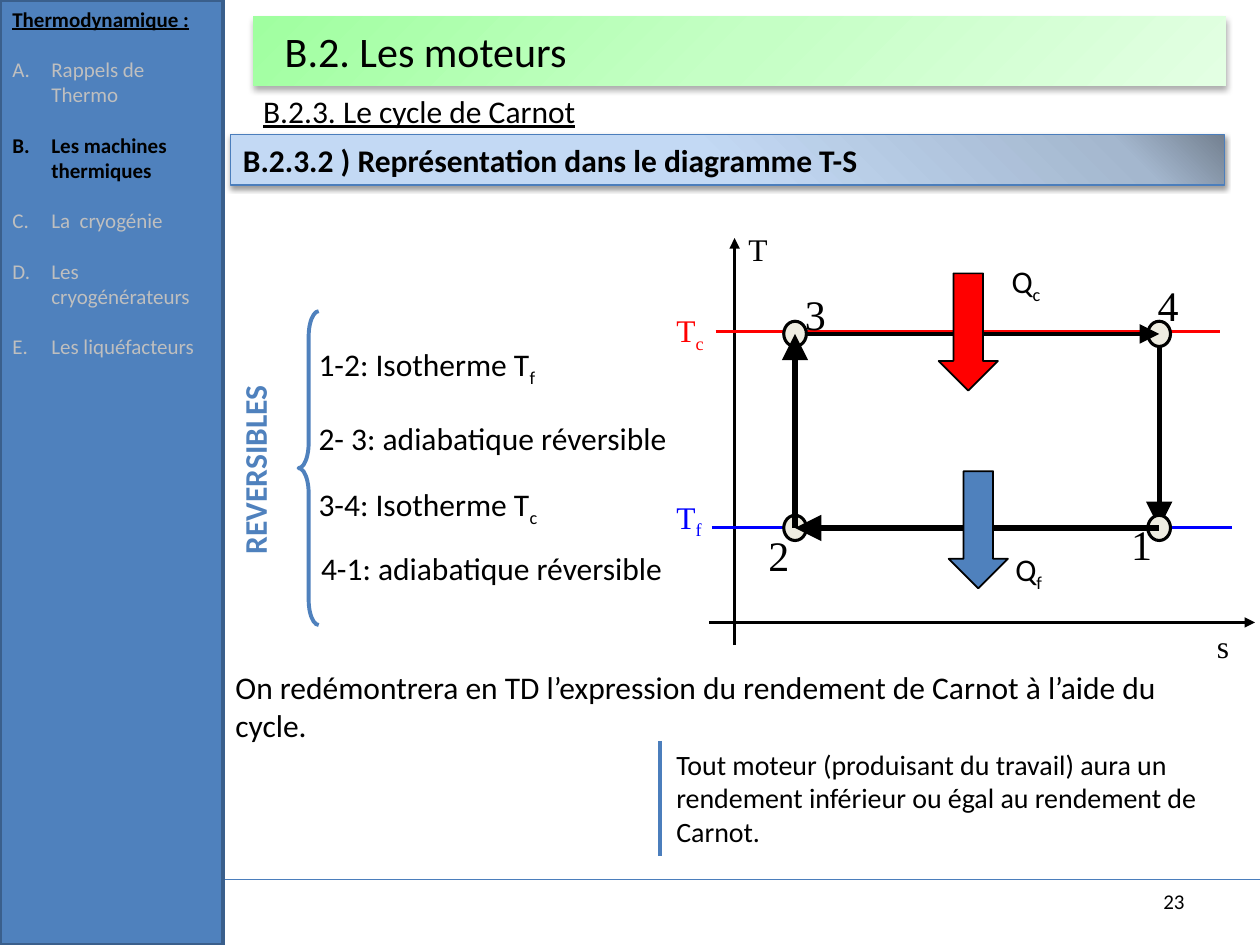
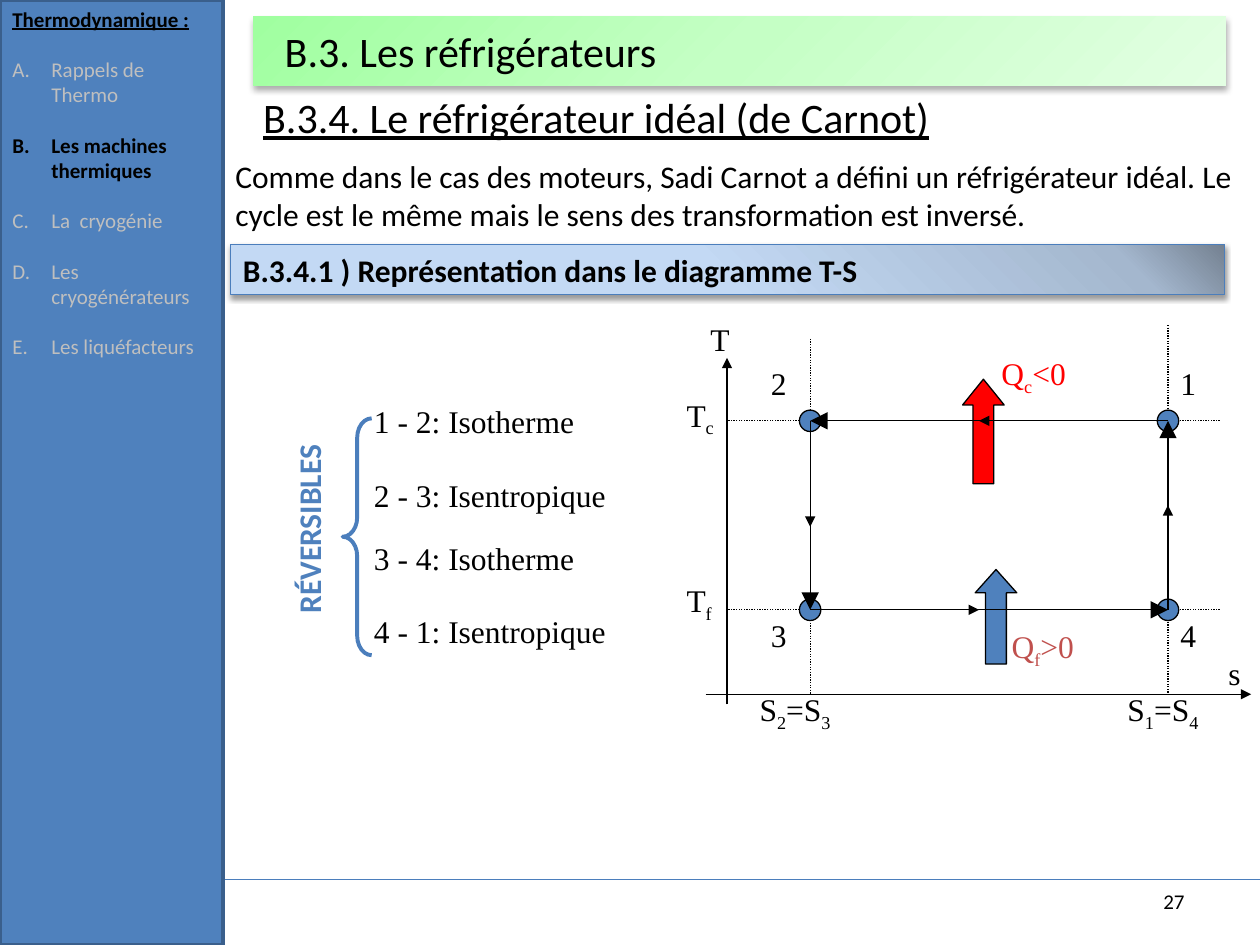
from pptx import Presentation
from pptx.dml.color import RGBColor
from pptx.enum.dml import MSO_LINE
from pptx.enum.shapes import MSO_CONNECTOR, MSO_SHAPE
from pptx.enum.text import MSO_ANCHOR, PP_ALIGN
from pptx.oxml.ns import qn
from pptx.oxml.xmlchemy import OxmlElement
from pptx.util import Inches, Pt

SANS, SERIF = "Calibri", "Times New Roman"
BLACK = RGBColor(0x00, 0x00, 0x00)
BLUE = RGBColor(0x4F, 0x81, 0xBD)
RULE_BLUE = RGBColor(0x4B, 0x7E, 0xBC)
DARK_BLUE = RGBColor(0x3A, 0x5F, 0x8C)
COLD_BLUE = RGBColor(0x00, 0x00, 0xFF)
RED = RGBColor(0xFF, 0x00, 0x00)
BRICK = RGBColor(0xC0, 0x50, 0x4D)
GREY = RGBColor(0xBF, 0xBF, 0xBF)
CREAM = RGBColor(0xEE, 0xEC, 0xE1)
GREEN_STOPS = [(0, RGBColor(0xA0, 0xFF, 0xA0)), (50, RGBColor(0xC5, 0xFF, 0xC5)),
               (100, RGBColor(0xE3, 0xFF, 0xE3))]
STEEL_STOPS = [(0, RGBColor(0x74, 0x81, 0x91)), (11, RGBColor(0xA4, 0xB7, 0xCE)),
               (52, RGBColor(0xC3, 0xD9, 0xF4))]

COLUMNS, ROWS = 100, 75
CHAPTERS = ["Rappels de Thermo", "Les machines thermiques", "La  cryogénie",
            "Les cryogénérateurs", "Les liquéfacteurs"]
CURRENT_CHAPTER = "Les machines thermiques"


def add_child(parent, tag, **attributes):
    child = OxmlElement(tag)
    for name, value in attributes.items():
        child.set(name, str(value))
    parent.append(child)
    return child


class Course:
    """Holds the deck, its grid and style, and the page being drawn."""

    def __init__(self):
        self.deck = Presentation()
        self.deck.slide_width, self.deck.slide_height = Inches(10), Inches(7.5)
        self.column = self.deck.slide_width / COLUMNS
        self.row = self.deck.slide_height / ROWS
        self.page = None

    def place(self, left, top, *size):
        """Turn grid columns and rows into slide lengths."""
        units = (self.column, self.row) * 2
        return [round(value * unit) for value, unit in zip((left, top, *size), units)]

    def start_page(self, title, number):
        self.page = self.deck.slides.add_slide(self.deck.slide_layouts[6])
        self.line((0, 69.8), (COLUMNS, 69.8), RULE_BLUE)
        self.shape(MSO_SHAPE.RECTANGLE, (0, 0, 17.7, ROWS), BLUE, DARK_BLUE, 2)
        band = self.shape(MSO_SHAPE.RECTANGLE, (20.1, 1.3, 77.2, 5.5), None, None)
        self.shade(band, GREEN_STOPS, 45)
        self.cast_shadow(band, 32, 3.5, 2.2)
        self.compose(band.text_frame, title, size=24)
        band.text_frame.margin_left = Inches(0.25)
        footer = self.text(str(number), (71.7, 69.5, 23.3), size=12, align=PP_ALIGN.RIGHT)
        footer.text_frame.vertical_anchor = MSO_ANCHOR.MIDDLE
        self.outline()

    def outline(self):
        """List the chapters in the sidebar, the current one in bold."""
        frame = self.text("Thermodynamique :", (0, 0, 17.7, 29.3), size=12,
                          bold=True, underline=True).text_frame
        for chapter in CHAPTERS:
            para = frame.add_paragraph()
            para.space_before = Pt(14.4)
            properties = para._p.get_or_add_pPr()
            properties.set("marL", str(Inches(0.31)))
            properties.set("indent", str(-Inches(0.31)))
            add_child(properties, "a:buFont", typeface="+mj-lt")
            add_child(properties, "a:buAutoNum", type="alphaUcPeriod")
            current = chapter == CURRENT_CHAPTER
            self.style(para, 12, SANS, BLACK if current else GREY, bold=current)
            para.add_run().text = chapter

    def style(self, para, size, face, color, bold=False, underline=False):
        font = para.font
        font.size, font.name, font.bold, font.underline = Pt(size), face, bold, underline
        font.color.rgb = color

    def compose(self, frame, text, size=18, face=SANS, color=BLACK, bold=False,
                underline=False, align=PP_ALIGN.LEFT):
        """Write one paragraph; the letter after an underscore is a subscript."""
        frame.word_wrap = True
        para = frame.paragraphs[0]
        para.alignment = align
        self.style(para, size, face, color, bold, underline)
        first, *others = text.split("_")
        para.add_run().text = first
        for part in others:
            span = para.add_run()
            span.text = part[0]
            span._r.get_or_add_rPr().set("baseline", "-25000")
            if part[1:]:
                para.add_run().text = part[1:]

    def text(self, text, area, turn=0, **style):
        left, top, width, height = (*area, 4)[:4]
        box = self.page.shapes.add_textbox(*self.place(left, top, width, height))
        box.rotation = turn
        self.compose(box.text_frame, text, **style)
        return box

    def shape(self, kind, area, fill, line=BLACK, weight=0.75, adjust=()):
        shape = self.page.shapes.add_shape(kind, *self.place(*area))
        shape.shadow.inherit = False
        for index, value in enumerate(adjust):
            shape.adjustments[index] = value
        for paint, color in ((shape.fill, fill), (shape.line.fill, line)):
            if color is None:
                paint.background()
            else:
                paint.solid()
                paint.fore_color.rgb = color
        if line is not None:
            shape.line.width = Pt(weight)
        return shape

    def shade(self, shape, stops, angle):
        shape.fill.gradient()
        gradient = shape._element.spPr.find(qn("a:gradFill"))
        stop_list = gradient.find(qn("a:gsLst"))
        for stop in list(stop_list):
            stop_list.remove(stop)
        for position, color in stops:
            stop = add_child(stop_list, "a:gs", pos=position * 1000)
            add_child(stop, "a:srgbClr", val=color)
        gradient.find(qn("a:lin")).set("ang", str(angle * 60000))

    def cast_shadow(self, shape, opacity, blur, distance):
        effects = shape._element.spPr.find(qn("a:effectLst"))
        shadow = add_child(effects, "a:outerShdw", blurRad=Pt(blur), dist=Pt(distance),
                           dir=90 * 60000, rotWithShape=0)
        color = add_child(shadow, "a:srgbClr", val=BLACK)
        add_child(color, "a:alpha", val=opacity * 1000)

    def line(self, start, end, color=BLACK, weight=0.75, arrow=None, dotted=False):
        """Draw a straight line; arrow is the size of its head, 'med' or 'lg'."""
        line = self.page.shapes.add_connector(
            MSO_CONNECTOR.STRAIGHT, *self.place(*start), *self.place(*end))
        line.line.color.rgb, line.line.width = color, Pt(weight)
        if dotted:
            line.line.dash_style = MSO_LINE.ROUND_DOT
        if arrow:
            add_child(line.line._get_or_add_ln(), "a:tailEnd",
                      type="triangle", w=arrow, len=arrow)
        add_child(line._element.spPr, "a:effectLst")

    def dot(self, center, width, height, fill, weight):
        left, top = center[0] - width / 2, center[1] - height / 2
        self.shape(MSO_SHAPE.OVAL, (left, top, width, height), fill, BLACK, weight)

    def section(self, text, top):
        band = self.shape(MSO_SHAPE.RECTANGLE, (18.3, top, 78.9, 4), None, RULE_BLUE)
        self.shade(band, STEEL_STOPS, 135)
        self.cast_shadow(band, 38, 3.1, 1.6)
        self.compose(band.text_frame, text, bold=True)

    def brace(self, area, curl, color, label, label_area):
        self.shape(MSO_SHAPE.LEFT_BRACE, area, None, color, 2.25, (curl, 0.5))
        self.text(label, label_area, turn=270, color=BLUE, bold=True, align=PP_ALIGN.CENTER)


def draw_engine_cycle(course):
    course.line((58.3, 51.2), (58.3, 18.9), weight=1.75, arrow="med")
    course.line((56.3, 49.4), (99.6, 49.4), weight=1.75, arrow="med")
    course.text("T", (58.4, 17.8, 5.1), face=SERIF)
    course.text("s", (95.6, 49.3, 6.4), face=SERIF)
    for label, top, level, left, right, color in (
            ("T_c", 24.2, 26.3, 56.8, 96.8, RED), ("T_f", 39, 41.9, 56.5, 97.8, COLD_BLUE)):
        course.text(label, (52.7, top, 7.5), face=SERIF, color=color)
        course.line((left, level), (right, level), color, 1.75)

    corners = {"1": (92, 41.9), "2": (63.1, 41.9), "3": (63.1, 26.5), "4": (92, 26.5)}
    for step in ("41", "4", "34", "1", "2", "12", "3", "23"):
        if len(step) == 1:
            course.dot(corners[step], 1.8, 2, CREAM, 1.75)
        else:
            weight = 2.25 if step == "34" else 3
            course.line(corners[step[0]], corners[step[1]], weight=weight, arrow="lg")
    for name, left, top in (("1", 88.8, 40.7), ("2", 60, 41.5), ("3", 62.9, 22.4),
                            ("4", 90.9, 21.7)):
        course.text(name, (left, top, 5, 5), size=24, face=SERIF)

    for label, left, top, fill, label_left, label_top in (
            ("Q_c", 74.5, 21.7, RED, 79.3, 20.3), ("Q_f", 75.3, 37.4, BLUE, 79.6, 43.2)):
        course.shape(MSO_SHAPE.DOWN_ARROW, (left, top, 4.7, 9.3), fill, BLACK, 1)
        course.text(label, (label_left, label_top, 6.3))


def draw_engine_page(course):
    course.start_page("B.2. Les moteurs", 23)
    course.text("B.2.3. Le cycle de Carnot", (19.9, 6.8, 75), underline=True)
    course.section("B.2.3.2 ) Représentation dans le diagramme T-S", 10.7)
    draw_engine_cycle(course)
    for step, left, top in (("1-2: Isotherme T_f", 24.3, 26.9),
                            ("2- 3: adiabatique réversible", 24.3, 32.8),
                            ("3-4: Isotherme T_c", 24.3, 38),
                            ("4-1: adiabatique réversible", 24.5, 43.1)):
        course.text(step, (left, top, 32))
    course.brace((23.7, 24.7, 1.6, 24.9), 1.26, BLUE, "REVERSIBLES", (7.4, 35.3, 25.6))
    course.text("On redémontrera en TD l’expression du rendement de Carnot à l’aide du cycle.",
                (17.7, 52.5, 76.9, 7.1))
    course.text("Tout moteur (produisant du travail) aura un rendement inférieur ou égal "
                "au rendement de Carnot.", (52.7, 58.8, 46.7, 9.1), size=16)
    course.line((52.4, 58.8), (52.4, 67.9), RULE_BLUE, 2.25)


def draw_refrigerator_cycle(course):
    left, right, hot, cold, base = 64.3, 92.7, 33.4, 48.4, 55.1
    for label, level, label_top in (("T_f", cold, 45.6), ("T_c", hot, 30.9)):
        course.line((96.8, level), (57.7, level), dotted=True)
        course.text(label, (53.5, label_top, 7.5), face=SERIF)
    for label, entropy, top, label_left in (("S_2=S_3", left, 26.9, 59.3),
                                            ("S_1=S_4", right, 25.8, 88.5)):
        course.line((entropy, top), (entropy, base), dotted=True)
        course.text(label, (label_left, 54.3, 10), face=SERIF)
    course.line((57.7, 55.9), (57.7, 28.4), arrow="med")
    course.line((56, base), (99.3, base), arrow="med")
    course.text("T", (55.4, 24.9, 4.5), face=SERIF)
    course.text("s", (96.5, 51.4, 5.8), face=SERIF)

    for area, neck, fill, label, label_area, color in (
            ((77.4, 45.2, 3.3, 7.5), 0.56, BLUE, "Q_f>0", (79.3, 49.3, 10), BRICK),
            ((76.4, 30.1, 3.3, 8.3), 0.62, RED, "Q_c<0", (78.5, 27.6, 11.7), RED)):
        course.shape(MSO_SHAPE.UP_ARROW, area, fill, adjust=(0.5, neck))
        course.text(label, label_area, face=SERIF, color=color)

    corners = [(right, hot), (left, hot), (left, cold), (right, cold)]
    for name, corner in enumerate(corners, 1):
        course.dot(corner, 1.7, 1.7, BLUE, 0.75)
        label_left = 92.7 if corner[0] == right else 60.2
        course.text(str(name), (label_left, 28.4 if corner[1] == hot else 48.4, 4.2), face=SERIF)
    midpoints = [(77.7, hot), (left, 41.8), (77.7, cold), (right, 40.1)]
    for start, middle, end in zip(corners, midpoints, corners[1:] + corners[:1]):
        course.line(start, middle, arrow="med")
        course.line(start, end, arrow="lg")


def draw_refrigerator_page(course):
    course.start_page("B.3. Les réfrigérateurs", 27)
    course.text("B.3.4. Le réfrigérateur idéal (de Carnot)", (19.9, 6.8, 75, 5),
                size=24, underline=True)
    course.text("Comme dans le cas des moteurs, Sadi Carnot a défini un réfrigérateur idéal. "
                "Le cycle est le même mais le sens des transformation est inversé.",
                (17.7, 12, 82.3, 7.1))
    course.section("B.3.4.1 ) Représentation dans le diagramme T-S", 19.4)
    draw_refrigerator_cycle(course)
    for step, top in (("1 - 2: Isotherme", 31.4), ("2 - 3: Isentropique", 37.3),
                      ("3 - 4: Isotherme", 42.3), ("4 - 1: Isentropique", 48.1)):
        course.text(step, (28.7, top, 25.4), face=SERIF)
    course.brace((27.2, 33.2, 2.3, 18.8), 0.67, RULE_BLUE, "RÉVERSIBLES", (14.9, 40, 19.2))


def main():
    course = Course()
    draw_engine_page(course)
    draw_refrigerator_page(course)
    course.deck.save("out.pptx")


if __name__ == "__main__":
    main()
